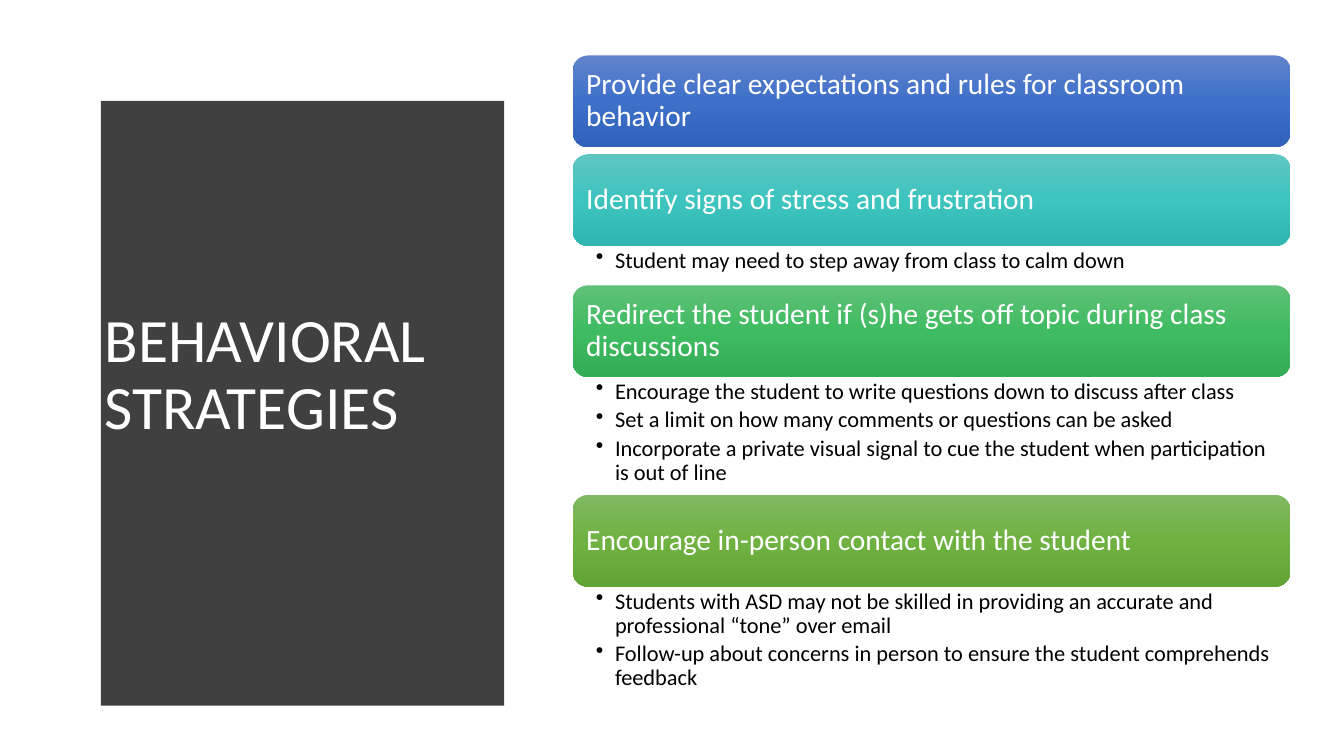
import copy
from dataclasses import dataclass

import pptx
import pptx.util
import pptx.dml.color
import pptx.enum.shapes
import pptx.enum.text
import pptx.oxml
import pptx.oxml.ns

Inches, Pt = pptx.util.Inches, pptx.util.Pt
RGB = pptx.dml.color.RGBColor.from_string
ANCHOR = pptx.enum.text.MSO_ANCHOR
qn = pptx.oxml.ns.qn

TITLE = "BEHAVIORAL STRATEGIES"
STRATEGIES = [
    ("Provide clear expectations and rules for classroom behavior",
     ("6183CB", "3E70CA", "3062BB"), 0.07, []),
    ("Identify signs of stress and frustration",
     ("60C6C1", "3DC4BF", "30B5B0"), 0.39,
     ["Student may need to step away from class to calm down"]),
    ("Redirect the student if (s)he gets off topic during class discussions",
     ("60C077", "3FBC62", "33AC55"), 1.17,
     ["Encourage the student to write questions down to discuss after class",
      "Set a limit on how many comments or questions can be asked",
      "Incorporate a private visual signal to cue the student when participation is out of line"]),
    ("Encourage in-person contact with the student",
     ("81B861", "6FB242", "62A336"), 1.09,
     ["Students with ASD may not be skilled in providing an accurate and professional “tone” over email",
      "Follow-up about concerns in person to ensure the student comprehends feedback"]),
]


@dataclass
class Theme:
    font: str = "Calibri"
    panel: str = "404040"
    light: str = "FFFFFF"
    dark: str = "000000"
    title_size: int = 44
    header_size: int = 21
    note_size: int = 16


THEME = Theme()
SLIDE_W, SLIDE_H = 13.33, 7.5
PANEL_X, PANEL_Y, PANEL_W, PANEL_H = 0.53, 0.52, 4.55, 6.44
BULGE, CURVE_STEPS = 0.24, 40
COLUMN_X, COLUMN_Y, COLUMN_W, HEADER_H = 5.68, 0.55, 7.12, 0.91


def set_frame(tf, anchor, insets):
    tf.word_wrap = True
    tf.vertical_anchor = anchor
    tf.margin_left, tf.margin_top, tf.margin_right, tf.margin_bottom = map(Inches, insets)


def write(p, text, size, color, after=0):
    p.text = text
    p.alignment = pptx.enum.text.PP_ALIGN.LEFT
    p.line_spacing = 0.9
    p.space_after = Pt(after)
    p.font.name = THEME.font
    p.font.size = Pt(size)
    p.font.color.rgb = RGB(color)


def add_bullet(p):
    pPr = p._p.get_or_add_pPr()
    pPr.set("marL", str(Inches(0.19)))
    pPr.set("indent", str(-Inches(0.19)))
    bullet = pptx.oxml.parse_xml(
        '<a:buChar xmlns:a="http://schemas.openxmlformats.org/drawingml/2006/main" char="•"/>')
    pPr.insert_element_before(bullet, "a:tabLst", "a:defRPr", "a:extLst")


def fill_gradient(sp, colors):
    sp.fill.gradient()
    sp.fill.gradient_angle = 270
    stops = sp._element.spPr.find(".//" + qn("a:gsLst"))
    stops.append(copy.deepcopy(stops[-1]))
    for i, (stop, color) in enumerate(zip(sp.fill.gradient_stops, colors)):
        stop.position = i / (len(colors) - 1)
        stop.color.rgb = RGB(color)


def add_panel(shapes):
    edge = []
    for i in range(CURVE_STEPS + 1):
        t = i / CURVE_STEPS
        edge.append((PANEL_X + PANEL_W + 4 * BULGE * t * (1 - t), PANEL_Y + PANEL_H * t))
    builder = shapes.build_freeform(PANEL_X, PANEL_Y, scale=Inches(1))
    builder.add_line_segments(edge + [(PANEL_X, PANEL_Y + PANEL_H)], close=True)
    sp = builder.convert_to_shape()
    sp.shadow.inherit = False
    sp.fill.solid()
    sp.fill.fore_color.rgb = RGB(THEME.panel)
    sp.line.fill.background()


def add_title(shapes):
    sp = shapes.add_textbox(Inches(0.94), Inches(1.11), Inches(3.74), Inches(5.24))
    set_frame(sp.text_frame, ANCHOR.MIDDLE, (0.1, 0.05, 0.1, 0.05))
    write(sp.text_frame.paragraphs[0], TITLE, THEME.title_size, THEME.light)


def add_header(shapes, top, text, colors):
    sp = shapes.add_shape(pptx.enum.shapes.MSO_SHAPE.ROUNDED_RECTANGLE,
                          Inches(COLUMN_X), Inches(top), Inches(COLUMN_W), Inches(HEADER_H))
    sp.shadow.inherit = False
    sp.line.fill.background()
    fill_gradient(sp, colors)
    set_frame(sp.text_frame, ANCHOR.MIDDLE, (0.09,) * 4)
    write(sp.text_frame.paragraphs[0], text, THEME.header_size, THEME.light)


def add_notes(shapes, top, height, notes):
    sp = shapes.add_textbox(Inches(COLUMN_X), Inches(top), Inches(COLUMN_W), Inches(height))
    tf = sp.text_frame
    set_frame(tf, ANCHOR.TOP, (0.23, 0.03, 0.16, 0.03))
    for i, note in enumerate(notes):
        p = tf.add_paragraph() if i else tf.paragraphs[0]
        write(p, note, THEME.note_size, THEME.dark, after=3.2)
        add_bullet(p)


def main():
    prs = pptx.Presentation()
    prs.slide_width, prs.slide_height = Inches(SLIDE_W), Inches(SLIDE_H)
    shapes = prs.slides.add_slide(prs.slide_layouts[6]).shapes
    add_panel(shapes)
    add_title(shapes)
    top = COLUMN_Y
    for header, colors, space_below, notes in STRATEGIES:
        add_header(shapes, top, header, colors)
        top += HEADER_H
        if notes:
            add_notes(shapes, top, space_below, notes)
        top += space_below
    prs.save("out.pptx")


if __name__ == "__main__":
    main()
